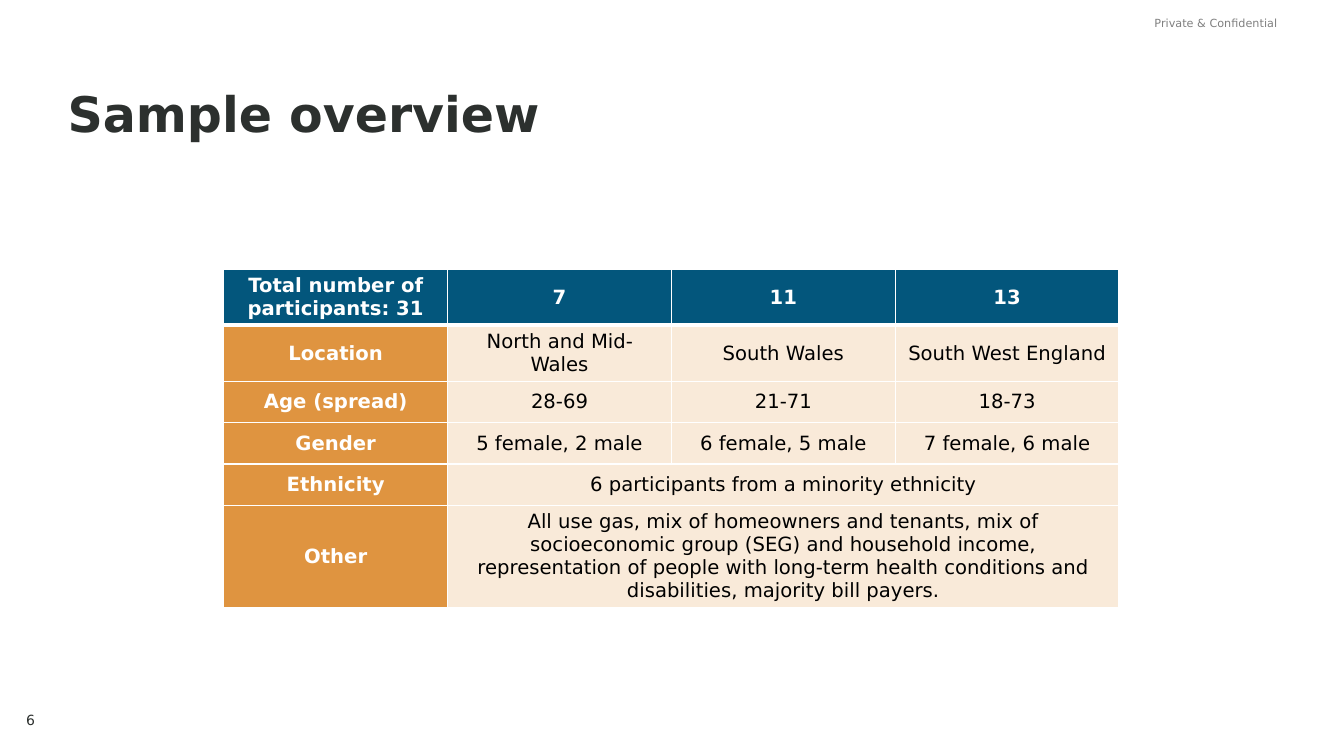
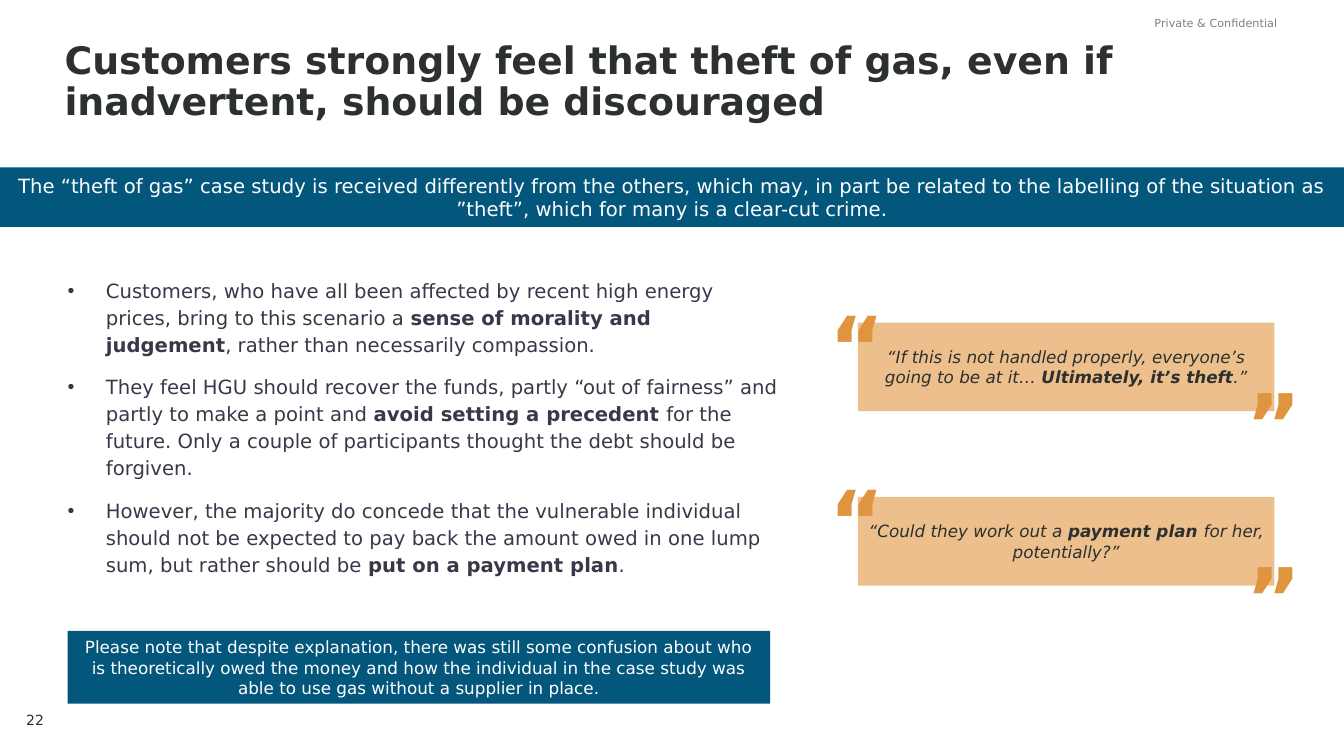
"""Builds the sample overview and the theft of gas findings slides."""
from lxml import etree
from pptx import Presentation
from pptx import util as u
from pptx.dml.color import RGBColor
from pptx.enum import shapes, text
from pptx.oxml import ns

PX = 9144
FONT = "DejaVu Sans"
WHITE = RGBColor(0xFF, 0xFF, 0xFF)
BLACK = RGBColor(0, 0, 0)
INK = RGBColor(0x2C, 0x30, 0x2E)
SLATE = RGBColor(0x38, 0x38, 0x49)
GREY = RGBColor(0x80, 0x80, 0x80)
BLUE = RGBColor(0x03, 0x56, 0x7C)
ORANGE = RGBColor(0xDF, 0x94, 0x40)
PEACH = RGBColor(0xEC, 0xBF, 0x8C)
CREAM = RGBColor(0xF9, 0xEA, 0xD9)

ALIGN = text.PP_ALIGN
ANCHOR = text.MSO_ANCHOR
NO_INSET = {"margin_left": 0, "margin_top": 0, "margin_right": 0, "margin_bottom": 0}
PLAIN_FRAME = {**NO_INSET, "word_wrap": True, "auto_size": text.MSO_AUTO_SIZE.NONE,
               "vertical_anchor": ANCHOR.TOP}
TITLE_FRAME = {**PLAIN_FRAME, "vertical_anchor": ANCHOR.BOTTOM}
MARK_FRAME = {**PLAIN_FRAME, "word_wrap": False}
PANEL_FRAME = {"word_wrap": True, "vertical_anchor": ANCHOR.MIDDLE}
TITLE_LINES = {"alignment": ALIGN.LEFT, "line_spacing": 0.9}
BULLET_LINES = {"alignment": ALIGN.LEFT, "line_spacing": 1.15, "space_after": u.Pt(5)}
CENTRED = {"alignment": ALIGN.CENTER}

PARTICIPANTS = [
    ["Total number of participants: 31", "7", "11", "13"],
    ["Location", "North and Mid-Wales", "South Wales", "South West England"],
    ["Age (spread)", "28-69", "21-71", "18-73"],
    ["Gender", "5 female, 2 male", "6 female, 5 male", "7 female, 6 male"],
    ["Ethnicity", "6 participants from a minority ethnicity"],
    ["Other", "All use gas, mix of homeowners and tenants, mix of socioeconomic group (SEG) "
              "and household income, representation of people with long-term health "
              "conditions and disabilities, majority bill payers."],
]
ROW_HEIGHTS = [55, 41, 41, 41, 41, 100]
COLUMN_WIDTH = 222

FINDINGS = [
    "Customers, who have all been affected by recent high energy prices, bring to this "
    "scenario a *sense of morality and judgement*, rather than necessarily compassion.",
    "They feel HGU should recover the funds, partly “out of fairness” and partly to make a "
    "point and *avoid setting a precedent *for the future. Only a couple of participants "
    "thought the debt should be forgiven.",
    "However, the majority do concede that the vulnerable individual should not be expected "
    "to pay back the amount owed in one lump sum, but rather should be "
    "*put on a payment plan*.",
]
QUOTES = {
    320: "“If this is not handled properly, everyone’s going to be at it… "
         "*Ultimately, it’s theft*.”",
    493: "“Could they work out a *payment plan *for her, potentially?”",
}


def apply(target, values):
    """Set every attribute named in a dict of format values."""
    for name, value in values.items():
        setattr(target, name, value)


def scaled(*lengths):
    """Turn px lengths into EMU."""
    return [u.Emu(length * PX) for length in lengths]


def write_line(paragraph, line, size, color, lines, **font):
    """Write one paragraph, with the parts between asterisks in bold."""
    apply(paragraph, lines)
    for index, part in enumerate(line.split("*")):
        run = paragraph.add_run()
        run.text = part
        apply(run.font, {"name": FONT, "size": u.Pt(size), "bold": index % 2 == 1, **font})
        run.font.color.rgb = color


def add_label(slide, box, line, size, color, frame=PLAIN_FRAME, lines=None, **font):
    """Add a text box holding one line and return it."""
    label = slide.shapes.add_textbox(*scaled(*box))
    apply(label.text_frame, frame)
    write_line(label.text_frame.paragraphs[0], line, size, color, lines or {}, **font)
    return label


def add_panel(slide, box, fill, line, size, color, **font):
    """Add a filled rectangle with centred text."""
    panel = slide.shapes.add_shape(shapes.MSO_SHAPE.RECTANGLE, *scaled(*box))
    panel.shadow.inherit = False
    panel.fill.solid()
    panel.fill.fore_color.rgb = fill
    panel.line.fill.background()
    apply(panel.text_frame, PANEL_FRAME)
    write_line(panel.text_frame.paragraphs[0], line, size, color, CENTRED, **font)


def move(placeholder, box, frame):
    """Place and format a template placeholder."""
    apply(placeholder, dict(zip(("left", "top", "width", "height"), scaled(*box))))
    apply(placeholder.text_frame, frame)


def add_slide(deck, layout, title, box, size, number):
    """Add a slide with its title, confidentiality note and page number."""
    slide = deck.slides.add_slide(deck.slide_layouts[layout])
    heading = slide.shapes.title
    move(heading, box, TITLE_FRAME)
    write_line(heading.text_frame.paragraphs[0], title, size, INK, TITLE_LINES, bold=True)
    add_label(slide, (1130, 16, 137, 23), "Private & Confidential", 8, GREY,
              lines={"alignment": ALIGN.RIGHT})
    add_label(slide, (26, 706, 41, 23), number, 10, INK)
    return slide


def add_borders(cell, top, bottom):
    """Give a cell white borders, with the top and bottom widths in points."""
    properties = cell._tc.get_or_add_tcPr()
    widths = {"a:lnL": 1, "a:lnR": 1, "a:lnT": top, "a:lnB": bottom}
    for index, (side, width) in enumerate(widths.items()):
        border = etree.Element(ns.qn(side), w=str(u.Pt(width)))
        fill = etree.SubElement(border, ns.qn("a:solidFill"))
        etree.SubElement(fill, ns.qn("a:srgbClr"), val=str(WHITE))
        properties.insert(index, border)


def add_participants(slide):
    """Add the participant table, merging values shared by all regions."""
    columns = len(PARTICIPANTS[0])
    box = (222, 267, COLUMN_WIDTH * columns, sum(ROW_HEIGHTS))
    table = slide.shapes.add_table(len(PARTICIPANTS), columns, *scaled(*box)).table
    for column in table.columns:
        column.width = u.Emu(COLUMN_WIDTH * PX)
    for r, values in enumerate(PARTICIPANTS):
        table.rows[r].height = u.Emu(ROW_HEIGHTS[r] * PX)
        if len(values) < columns:
            table.cell(r, 1).merge(table.cell(r, columns - 1))
        for c in range(columns):
            cell = table.cell(r, c)
            is_heading = r == 0 or c == 0
            cell.fill.solid()
            cell.fill.fore_color.rgb = BLUE if r == 0 else ORANGE if c == 0 else CREAM
            cell.vertical_anchor = ANCHOR.MIDDLE
            add_borders(cell, 3 if r == 1 else 1, 3 if r == 0 else 1)
            if c < len(values):
                write_line(cell.text_frame.paragraphs[0], values[c], 14,
                           WHITE if is_heading else BLACK, CENTRED, bold=is_heading)


def add_findings(slide):
    """Fill the body placeholder with the bulleted findings."""
    body = slide.placeholders[1]
    move(body, (67, 273, 705, 331), PLAIN_FRAME)
    for index, finding in enumerate(FINDINGS):
        frame = body.text_frame
        paragraph = frame.add_paragraph() if index else frame.paragraphs[0]
        properties = paragraph._p.get_or_add_pPr()
        properties.set("marL", str(38 * PX))
        properties.set("indent", str(-38 * PX))
        etree.SubElement(properties, ns.qn("a:buChar"), char="•")
        space = {"space_before": u.Pt(6 if index else 0)}
        write_line(paragraph, finding, 14, SLATE, {**BULLET_LINES, **space})


def add_quote(slide, top, quote):
    """Add a quotation panel between two large quotation marks."""
    left = 851
    add_panel(slide, (left, top, 413, 88), PEACH, quote, 12, INK, italic=True)
    for dx, dy, turn in ((-28, -29, 0), (382, 59, 180)):
        mark = add_label(slide, (left + dx, top + dy, 58, 60), "“", 60, ORANGE,
                         MARK_FRAME, bold=True)
        mark.rotation = turn


def main():
    """Build both slides and save the deck."""
    deck = Presentation()
    deck.slide_width, deck.slide_height = scaled(1333, 750)

    sample = add_slide(deck, 5, "Sample overview", (67, 39, 1200, 103), 35, "6")
    add_participants(sample)

    theft = add_slide(deck, 1, "Customers strongly feel that theft of gas, even if "
                      "inadvertent, should be discouraged", (64, 52, 1203, 71), 27, "22")
    for top, quote in QUOTES.items():
        add_quote(theft, top, quote)
    add_panel(theft, (0, 166, 1333, 59), BLUE,
              "The “theft of gas” case study is received differently from the others, which "
              "may, in part be related to the labelling of the situation as ”theft”, which "
              "for many is a clear-cut crime.", 14, WHITE)
    add_findings(theft)
    add_panel(theft, (67, 626, 697, 72), BLUE,
              "Please note that despite explanation, there was still some confusion about who "
              "is theoretically owed the money and how the individual in the case study was "
              "able to use gas without a supplier in place.", 12, WHITE)

    deck.save("out.pptx")


if __name__ == "__main__":
    main()
